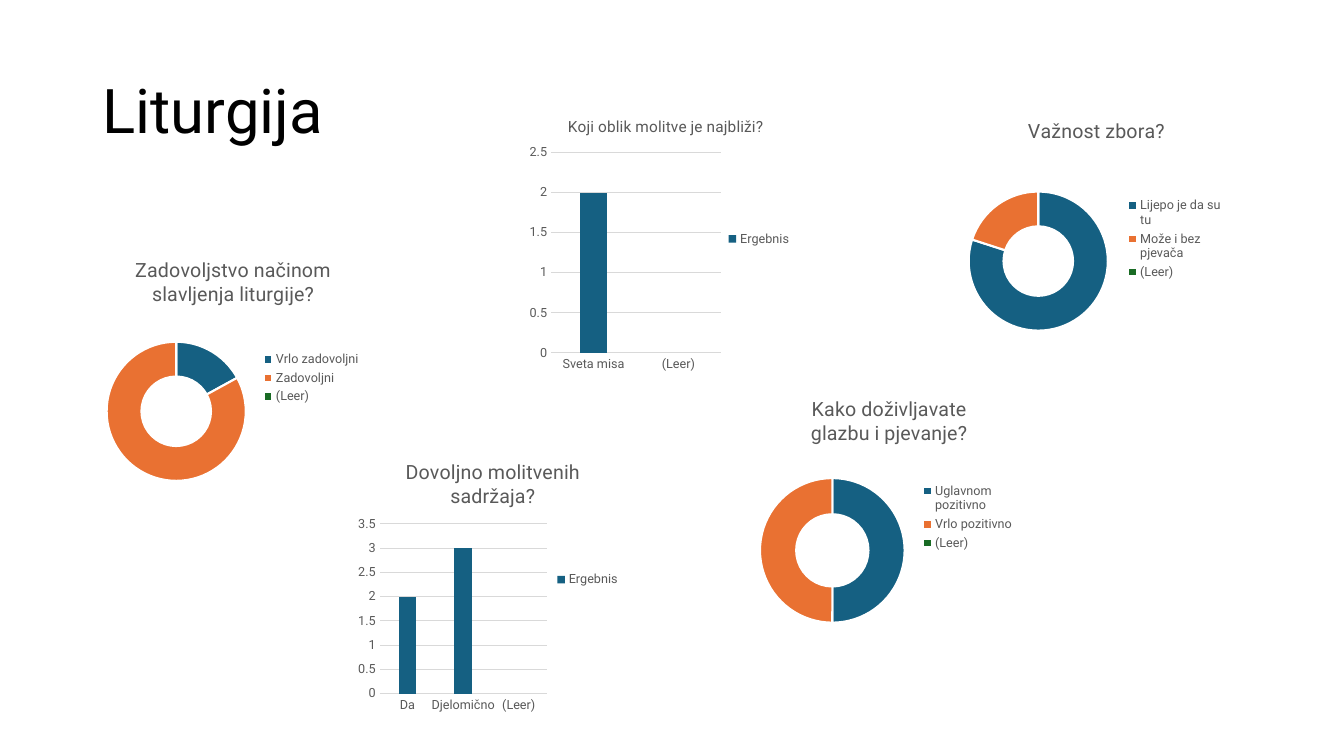
from lxml.etree import SubElement
from pptx import Presentation
from pptx.chart.data import CategoryChartData
from pptx.dml.color import RGBColor
from pptx.enum.chart import XL_CHART_TYPE, XL_LEGEND_POSITION, XL_TICK_MARK
from pptx.enum.text import MSO_ANCHOR
from pptx.oxml.ns import qn
from pptx.util import Inches, Pt

FONT = "Roboto"
BLACK = RGBColor(0x00, 0x00, 0x00)
WHITE = RGBColor(0xFF, 0xFF, 0xFF)
GRAY = RGBColor(0x59, 0x59, 0x59)
GRID = RGBColor(0xD9, 0xD9, 0xD9)
BLUE = RGBColor(0x15, 0x60, 0x82)
ORANGE = RGBColor(0xE9, 0x71, 0x32)
GREEN = RGBColor(0x19, 0x6B, 0x24)
CHART_SIZE = 2.76


def set_font(font, size, color=GRAY):
    font.name = FONT
    font.size = Pt(size)
    font.bold = False
    font.color.rgb = color


def set_layout(parent, index, **values):
    for old in parent.findall(qn("c:layout")):
        parent.remove(old)
    layout = SubElement(parent, qn("c:layout"))
    parent.insert(index, layout)
    manual = SubElement(layout, qn("c:manualLayout"))
    if "w" in values:
        SubElement(manual, qn("c:layoutTarget")).set("val", "inner")
    for mode in ("xMode", "yMode"):
        SubElement(manual, qn(f"c:{mode}")).set("val", "edge")
    for key, value in values.items():
        SubElement(manual, qn(f"c:{key}")).set("val", str(value))


def add_title(s, text):
    box = s.shapes.add_textbox(Inches(0.92), Inches(0.4), Inches(11.5), Inches(1.45))
    tf = box.text_frame
    tf.word_wrap = True
    tf.vertical_anchor = MSO_ANCHOR.MIDDLE
    p = tf.paragraphs[0]
    p.text = text
    p.line_spacing = 0.9
    set_font(p.font, 44, BLACK)


def add_chart(s, kind, left, top, title, title_x, plot, series, values, title_size=14):
    data = CategoryChartData()
    data.categories = list(values)
    data.add_series(series, list(values.values()))
    frame = s.shapes.add_chart(kind, Inches(left), Inches(top),
                               Inches(CHART_SIZE), Inches(CHART_SIZE), data)
    chart = frame.chart
    set_font(chart.font, 10, BLACK)

    chart.has_title = True
    p = chart.chart_title.text_frame.paragraphs[0]
    p.text = title
    set_font(p.font, title_size)
    set_layout(chart.chart_title._element, 1, x=title_x, y=0.05)

    chart.has_legend = True
    chart.legend.position = XL_LEGEND_POSITION.RIGHT
    chart.legend.include_in_layout = False
    set_font(chart.legend.font, 9)

    x, y, w, h = plot
    set_layout(chart.plots[0]._element.getparent(), 0, x=x, y=y, w=w, h=h)
    return chart


def add_doughnut(s, left, top, title, title_x, plot, values):
    chart = add_chart(s, XL_CHART_TYPE.DOUGHNUT, left, top, title, title_x,
                      plot, "Series 1", values)
    ring = chart.plots[0]
    ring.has_data_labels = False
    ring.vary_by_categories = True
    ring._element.find(qn("c:holeSize")).set("val", "75")
    for i, color in enumerate((BLUE, ORANGE, GREEN)):
        fmt = ring.series[0].points[i].format
        fmt.fill.solid()
        fmt.fill.fore_color.rgb = color
        fmt.line.color.rgb = WHITE
        fmt.line.width = Pt(1.5)


def add_columns(s, left, top, title, title_x, plot, values, maximum, title_size=14):
    chart = add_chart(s, XL_CHART_TYPE.COLUMN_CLUSTERED, left, top, title, title_x,
                      plot, "Ergebnis", values, title_size)
    columns = chart.plots[0]
    columns.vary_by_categories = False
    columns.gap_width = 219
    columns.overlap = -27
    fill = columns.series[0].format.fill
    fill.solid()
    fill.fore_color.rgb = BLUE

    cat, val = chart.category_axis, chart.value_axis
    for axis in (cat, val):
        axis.major_tick_mark = XL_TICK_MARK.NONE
        axis.minor_tick_mark = XL_TICK_MARK.NONE
        set_font(axis.tick_labels.font, 9)
    val.minimum_scale = 0
    val.maximum_scale = maximum
    val.major_unit = 0.5
    val.has_major_gridlines = True
    val.format.line.fill.background()
    for line in (cat.format.line, val.major_gridlines.format.line):
        line.color.rgb = GRID
        line.width = Pt(0.75)


def main():
    prs = Presentation()
    prs.slide_width = Inches(13.33)
    prs.slide_height = Inches(7.5)
    s = prs.slides.add_slide(prs.slide_layouts[6])

    add_title(s, "Liturgija")
    add_doughnut(s, 0.92, 2.37, "Zadovoljstvo načinom slavljenja liturgije?", 0.14,
                 (0.05, 0.37, 0.5, 0.5),
                 {"Vrlo zadovoljni": 17, "Zadovoljni": 83, "(Leer)": None})
    add_columns(s, 5.19, 0.99, "Koji oblik molitve je najbliži?", 0.15,
                (0.1, 0.19, 0.61, 0.72),
                {"Sveta misa": 2, "(Leer)": None}, 2.5, title_size=11)
    add_columns(s, 3.49, 4.37, "Dovoljno molitvenih sadržaja?", 0.18,
                (0.1, 0.3, 0.6, 0.61),
                {"Da": 2, "Djelomično": 3, "(Leer)": None}, 3.5)
    add_doughnut(s, 7.4, 3.75, "Kako doživljavate glazbu i pjevanje?", 0.22,
                 (0.05, 0.36, 0.52, 0.52),
                 {"Uglavnom pozitivno": 50, "Vrlo pozitivno": 50, "(Leer)": None})
    add_doughnut(s, 9.47, 0.99, "Važnost zbora?", 0.25,
                 (0.05, 0.33, 0.5, 0.5),
                 {"Lijepo je da su tu": 80, "Može i bez pjevača": 20, "(Leer)": None})

    prs.save("out.pptx")


if __name__ == "__main__":
    main()
